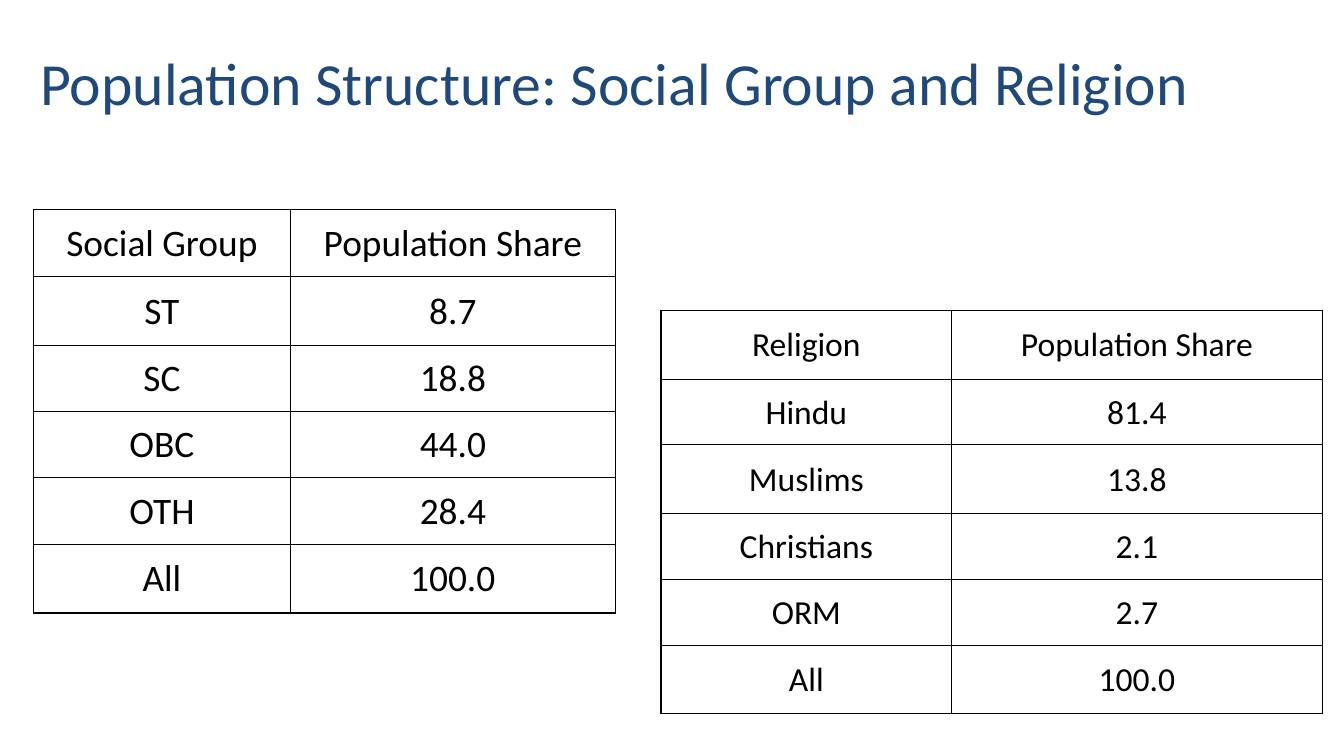
from lxml import etree
from pptx import Presentation
from pptx.dml.color import RGBColor
from pptx.enum.text import MSO_ANCHOR, PP_ALIGN
from pptx.oxml.ns import qn
from pptx.util import Inches, Pt

CENTER = PP_ALIGN.CENTER
MIDDLE = MSO_ANCHOR.MIDDLE
NAVY = RGBColor(0x1F, 0x49, 0x7D)
BLACK = RGBColor(0x00, 0x00, 0x00)
FONT = "Calibri"
OUTER_LINE = Pt(1)
INNER_LINE = Pt(0.5)
TITLE_ONLY = 5

SOCIAL_GROUPS = [
    ("Social Group", "Population Share"),
    ("ST", "8.7"),
    ("SC", "18.8"),
    ("OBC", "44.0"),
    ("OTH", "28.4"),
    ("All", "100.0"),
]
RELIGIONS = [
    ("Religion", "Population Share"),
    ("Hindu", "81.4"),
    ("Muslims", "13.8"),
    ("Christians", "2.1"),
    ("ORM", "2.7"),
    ("All", "100.0"),
]


def write_text(text_frame, text, *, size, color=BLACK, font=FONT, align=CENTER):
    paragraph = text_frame.paragraphs[0]
    paragraph.alignment = align
    run = paragraph.add_run()
    run.text = text
    run.font.name = font
    run.font.size = Pt(size)
    run.font.color.rgb = color


def set_borders(cell, widths):
    """Draw cell borders; widths maps L, R, T and B, in that order, to line widths."""
    properties = cell._tc.get_or_add_tcPr()
    for side, width in widths.items():
        line = etree.SubElement(properties, qn(f"a:ln{side}"), w=str(width))
        fill = etree.SubElement(line, qn("a:solidFill"))
        etree.SubElement(fill, qn("a:srgbClr"), val=str(BLACK))


class SlideBuilder:
    def __init__(self, presentation):
        self.slide = presentation.slides.add_slide(presentation.slide_layouts[TITLE_ONLY])

    def title(self, text, left, top, width, height):
        shape = self.slide.shapes.title
        shape.left, shape.top = Inches(left), Inches(top)
        shape.width, shape.height = Inches(width), Inches(height)
        shape.text_frame.vertical_anchor = MIDDLE
        write_text(shape.text_frame, text, size=32, color=NAVY)

    def table(self, rows, left, top, column_widths, row_heights, size):
        frame = self.slide.shapes.add_table(
            len(rows), len(column_widths), Inches(left), Inches(top),
            Inches(sum(column_widths)), Inches(sum(row_heights)))
        table = frame.table
        table.first_row = False
        table.horz_banding = False
        for column, width in zip(table.columns, column_widths):
            column.width = Inches(width)
        for row, height in zip(table.rows, row_heights):
            row.height = Inches(height)

        last_row, last_column = len(rows) - 1, len(column_widths) - 1
        for row_index, values in enumerate(rows):
            for column_index, value in enumerate(values):
                cell = table.cell(row_index, column_index)
                on_edge = {
                    "L": column_index == 0,
                    "R": column_index == last_column,
                    "T": row_index == 0,
                    "B": row_index == last_row,
                }
                set_borders(cell, {side: OUTER_LINE if edge else INNER_LINE
                                   for side, edge in on_edge.items()})
                cell.fill.background()
                cell.vertical_anchor = MIDDLE
                cell.margin_left = cell.margin_right = cell.margin_top = Inches(0.01)
                cell.margin_bottom = 0
                write_text(cell.text_frame, value, size=size)


def main():
    presentation = Presentation()
    presentation.slide_width = Inches(10)
    presentation.slide_height = presentation.slide_width * 9 // 16

    builder = SlideBuilder(presentation)
    builder.title("Population Structure: Social Group and Religion", 0, 0.36, 9.15, 0.5)
    builder.table(SOCIAL_GROUPS, 0.25, 1.56, (1.91, 2.42),
                  (0.5, 0.51, 0.49, 0.49, 0.5, 0.51), size=20)
    builder.table(RELIGIONS, 4.92, 2.31, (2.16, 2.76),
                  (0.51, 0.49, 0.51, 0.49, 0.49, 0.51), size=18)
    presentation.save("out.pptx")


if __name__ == "__main__":
    main()
